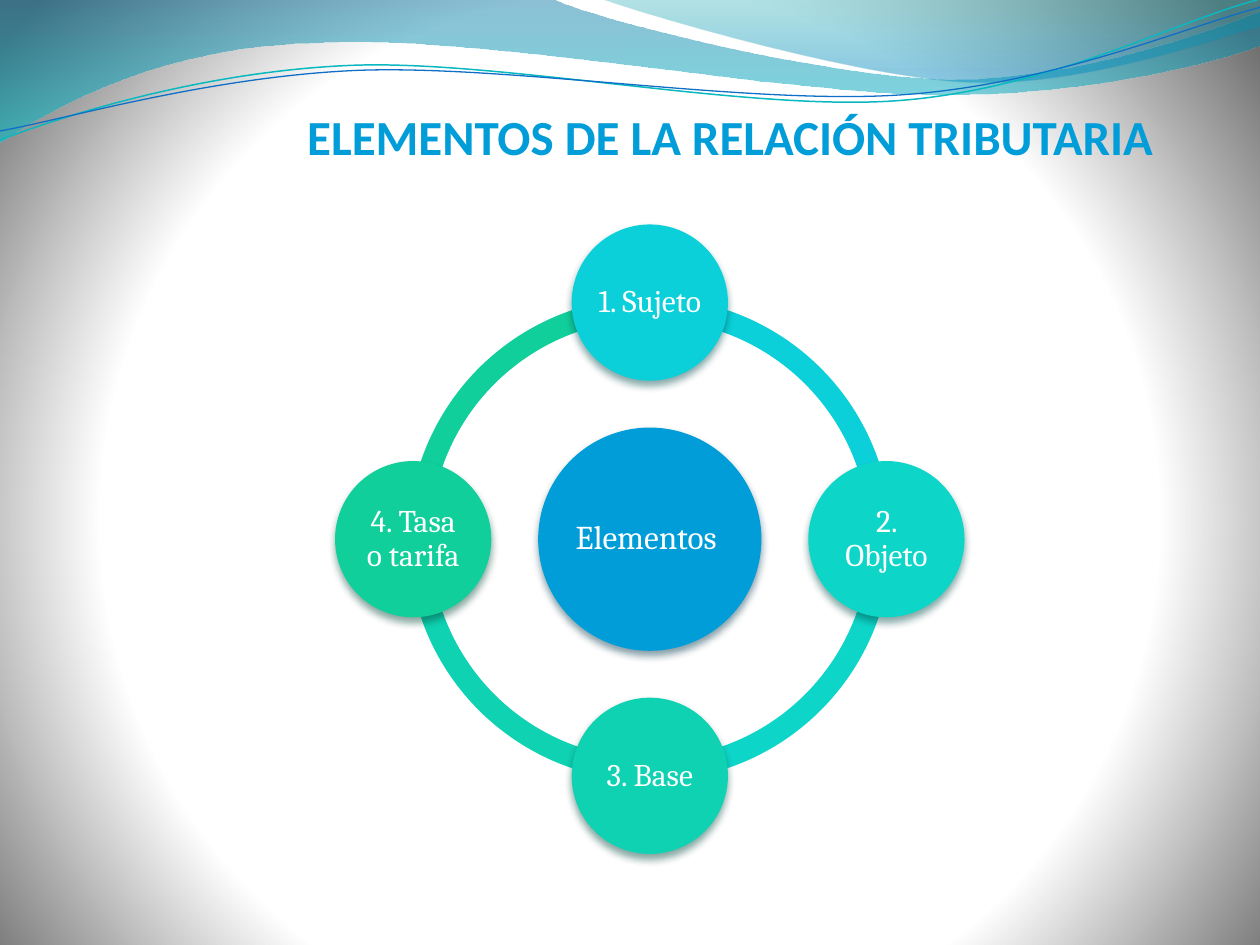
import math
import lxml.etree
import pptx
import pptx.dml.color
import pptx.enum.shapes
import pptx.enum.text
import pptx.oxml
import pptx.oxml.ns
import pptx.util

Cm = pptx.util.Cm
Pt = pptx.util.Pt
RGB = pptx.dml.color.RGBColor.from_string
qn = pptx.oxml.ns.qn
NAMESPACE = "http://schemas.openxmlformats.org/drawingml/2006/main"

colors = {
    "white": "FFFFFF",
    "vignette": "707070",
    "blue": "009DD9",
    "sujeto": "0BD0D9",
    "objeto": "0DD6C9",
    "base": "0ED2B2",
    "tasa": "10CF9B",
    "blue_shadow": "00374C",
    "sujeto_shadow": "024B4E",
    "objeto_shadow": "034D48",
    "base_shadow": "034C3F",
    "tasa_shadow": "044A37",
    "wave_blue": "0074A1",
    "wave_cyan": "00C6CF",
    "crest_teal": "00A1A9",
    "crest_blue": "008BBF",
    "line_teal": "0AB8BF",
    "line_blue": "0F6FC6",
}


def apply_gradient(fill, container, stops, direction):
    fill.gradient()
    stop_xml = "".join(
        f'<a:gs pos="{position * 1000}"><a:srgbClr val="{colors[name]}">'
        f'<a:alpha val="{opacity * 1000}"/></a:srgbClr></a:gs>'
        for position, name, opacity in stops
    )
    gradient = pptx.oxml.parse_xml(
        f'<a:gradFill xmlns:a="{NAMESPACE}" rotWithShape="1">'
        f"<a:gsLst>{stop_xml}</a:gsLst>{direction}</a:gradFill>"
    )
    old_gradient = next(container.iter(qn("a:gradFill")))
    old_gradient.getparent().replace(old_gradient, gradient)


def draw_outline(shapes, start, segments, closed):
    points = [start]
    for segment in segments:
        points.extend(zip(segment[::2], segment[1::2]))
    vertices = [(Cm(x), Cm(y)) for x, y in points]
    builder = shapes.build_freeform(*vertices[0], scale=1.0)
    builder.add_line_segments(vertices[1:], close=closed)
    shape = builder.convert_to_shape()
    shape.shadow.inherit = False
    steps = iter(list(shape.element.iter(qn("a:lnTo"))))
    for segment in segments:
        first = next(steps)
        if len(segment) == 6:
            curve = lxml.etree.Element(qn("a:cubicBezTo"))
            first.addprevious(curve)
            for step in (first, next(steps), next(steps)):
                curve.append(step[0])
                step.getparent().remove(step)
    return shape


presentation = pptx.Presentation()
presentation.slide_width = Cm(25.4)
presentation.slide_height = Cm(19.05)
slide = presentation.slides.add_slide(presentation.slide_layouts[6])
shapes = slide.shapes

apply_gradient(
    slide.background.fill,
    slide.element,
    [(0, "white", 100), (67, "white", 100), (100, "vignette", 100)],
    '<a:path path="circle"><a:fillToRect l="10000" t="110000" r="10000" b="100000"/></a:path>',
)

bands = [
    ((0, 0), [
        (11.18, 0),
        (12.09, 0.43, 16.87, 1.6, 19.25, 1.6),
        (21.67, 1.6, 24.33, 0.66, 25.4, 0.23),
        (25.4, 0.91),
        (24.97, 1.12, 22.1, 1.93, 18.95, 1.91),
        (15.8, 1.91, 9.7, 0.71, 6.53, 0.86),
        (3.28, 0.91, 1.17, 2.11, 0, 2.87),
    ], [(0, "wave_blue", 45), (100, "wave_cyan", 55)]),
    ((12.17, 0), [
        (12.93, 0.28, 17.32, 1.57, 19.53, 1.65),
        (21.74, 1.75, 24.41, 0.81, 25.4, 0.53),
        (25.4, 0),
    ], [(0, "crest_teal", 30), (80, "crest_blue", 45)]),
]
for start, segments, stops in bands:
    band = draw_outline(shapes, start, segments, True)
    band.line.fill.background()
    apply_gradient(band.fill, band.element, stops, '<a:lin ang="5400000" scaled="0"/>')

wave_lines = [
    ("line_teal", 0.85, (0, 2.82), [
        (1.22, 2.36, 4.01, 1.45, 7.04, 1.32),
        (10.03, 1.19, 15.06, 2.26, 18.11, 2.03),
        (21.16, 1.8, 23.83, 0.38, 25.35, 0),
    ]),
    ("line_blue", 0.75, (0, 2.64), [
        (1.19, 2.44, 4.17, 1.55, 7.19, 1.42),
        (10.24, 1.3, 15.16, 2.13, 18.21, 1.91),
        (21.23, 1.7, 23.93, 0.53, 25.4, 0.15),
    ]),
]
for color, width, start, segments in wave_lines:
    wave_line = draw_outline(shapes, start, segments, False)
    wave_line.fill.background()
    wave_line.line.color.rgb = RGB(colors[color])
    wave_line.line.width = Pt(width)

title = shapes.add_textbox(Cm(1.47), Cm(1.12), Cm(21.82), Cm(2.21))
text_frame = title.text_frame
text_frame.word_wrap = True
text_frame.vertical_anchor = pptx.enum.text.MSO_ANCHOR.BOTTOM
text_frame.margin_left = text_frame.margin_top = text_frame.margin_bottom = 0
text_frame.margin_right = Cm(0.05)
text_frame.text = "ELEMENTOS DE LA RELACIÓN TRIBUTARIA"
paragraph = text_frame.paragraphs[0]
paragraph.alignment = pptx.enum.text.PP_ALIGN.RIGHT
font = paragraph.runs[0].font
font.name, font.size, font.bold = "Calibri", Pt(28), True
font.color.rgb = RGB(colors["blue"])

center_x, center_y = 13.1, 10.87
ring_size, orbit = 9.75, 4.77
quarter_arcs = [("tasa", 108, 162), ("base", 54, 108), ("objeto", 0, 54), ("sujeto", 162, 0)]
for color, arc_start, arc_end in quarter_arcs:
    arc = shapes.add_shape(
        pptx.enum.shapes.MSO_SHAPE.BLOCK_ARC,
        Cm(center_x - ring_size / 2), Cm(center_y - ring_size / 2), Cm(ring_size), Cm(ring_size),
    )
    for index, value in enumerate((arc_start, arc_end, 0.046)):
        arc.adjustments[index] = value
    arc.shadow.inherit = False
    arc.fill.solid()
    arc.fill.fore_color.rgb = RGB(colors[color])
    arc.line.fill.background()

circles = [("Elementos ", "blue", 4.5, 19, center_x, center_y)]
nodes = [
    ("1. Sujeto", "sujeto"),
    ("2. Objeto", "objeto"),
    ("3. Base", "base"),
    ("4. Tasa o tarifa", "tasa"),
]
for index, (label, color) in enumerate(nodes):
    angle = math.radians(90 * index - 90)
    x, y = center_x + orbit * math.cos(angle), center_y + orbit * math.sin(angle)
    circles.append((label, color, 3.15, 18, x, y))

for label, color, size, font_size, x, y in circles:
    circle = shapes.add_shape(
        pptx.enum.shapes.MSO_SHAPE.OVAL, Cm(x - size / 2), Cm(y - size / 2), Cm(size), Cm(size)
    )
    circle.fill.solid()
    circle.fill.fore_color.rgb = RGB(colors[color])
    circle.line.fill.background()
    circle.shadow.inherit = False
    effects = circle.element.spPr.find(qn("a:effectLst"))
    shadow = lxml.etree.SubElement(
        effects, qn("a:outerShdw"), blurRad=str(Pt(4.5)), dist=str(Pt(3)), dir="5400000", rotWithShape="0"
    )
    shadow_fill = lxml.etree.SubElement(shadow, qn("a:srgbClr"), val=colors[f"{color}_shadow"])
    lxml.etree.SubElement(shadow_fill, qn("a:alpha"), val="48000")

    side = size / math.sqrt(2)
    text_box = shapes.add_textbox(Cm(x - side / 2), Cm(y - side / 2), Cm(side), Cm(side))
    text_frame = text_box.text_frame
    text_frame.word_wrap = True
    text_frame.vertical_anchor = pptx.enum.text.MSO_ANCHOR.MIDDLE
    text_frame.margin_left = text_frame.margin_right = Cm(0.08)
    text_frame.margin_top = text_frame.margin_bottom = Cm(0.08)
    text_frame.text = label
    paragraph = text_frame.paragraphs[0]
    paragraph.alignment = pptx.enum.text.PP_ALIGN.CENTER
    paragraph.line_spacing = 0.9
    font = paragraph.runs[0].font
    font.name, font.size = "Cambria", Pt(font_size)
    font.color.rgb = RGB(colors["white"])

presentation.save("out.pptx")
